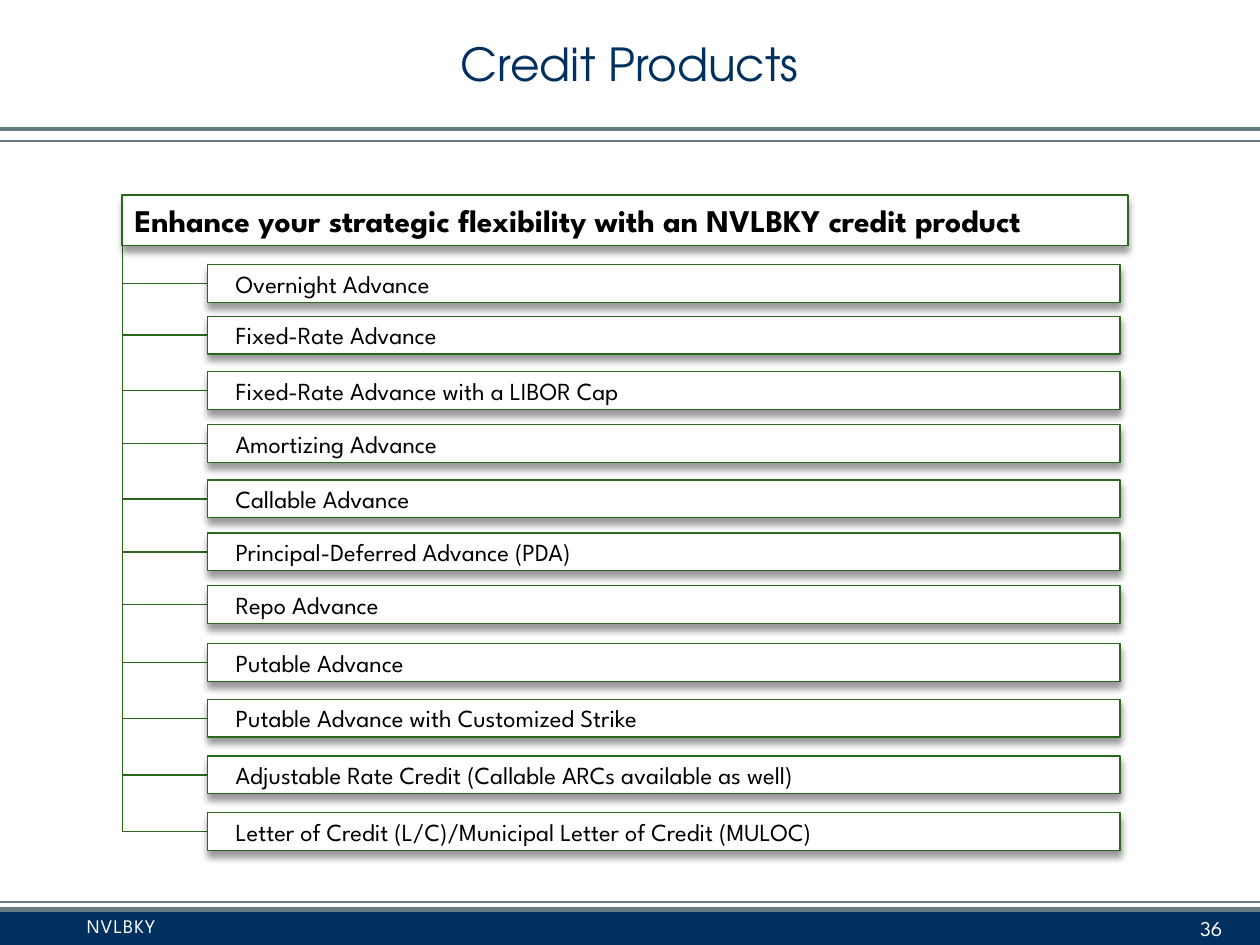
from dataclasses import dataclass

from lxml.etree import SubElement
from pptx import Presentation
from pptx.dml.color import RGBColor
from pptx.enum.shapes import MSO_CONNECTOR as Link, MSO_SHAPE as Form
from pptx.enum.text import MSO_ANCHOR as Anchor, PP_ALIGN as Align
from pptx.oxml.ns import qn
from pptx.shapes.autoshape import Shape
from pptx.slide import Slide
from pptx.util import Inches, Pt

NAVY = RGBColor(0x00, 0x30, 0x5E)
GRAY = RGBColor(0x66, 0x7C, 0x82)
GREEN = RGBColor(0x29, 0x67, 0x1C)
WHITE = RGBColor(0xFF, 0xFF, 0xFF)
BLACK = RGBColor(0x00, 0x00, 0x00)
SPARTAN = "League Spartan"
GYRE = "TeX Gyre Adventor"
BRAND = "NVLBKY"
STEM, LEFT = 0.97, 1.65
WIDE, TALL = 7.24, 0.3


@dataclass(frozen=True)
class Area:
    left: float
    top: float
    width: float
    height: float

    def sizes(self) -> list[int]:
        return [Inches(n) for n in (self.left, self.top, self.width, self.height)]


@dataclass(frozen=True)
class Style:
    size: float
    color: RGBColor
    font: str = SPARTAN
    bold: bool = False
    space: int = 0
    align: Align = Align.LEFT
    anchor: Anchor = Anchor.MIDDLE
    inset: float = 0.1
    edge: float = 0.05


@dataclass(frozen=True)
class Item:
    label: str
    top: float


TITLE = Style(26, NAVY, GYRE, align=Align.CENTER)
HEAD = Style(18, BLACK, bold=True, anchor=Anchor.TOP)
ENTRY = Style(14, BLACK, inset=0.22, edge=0)
FOOT = Style(11, WHITE, space=50, anchor=Anchor.TOP, inset=0.69)
PAGE = Style(12, WHITE, align=Align.RIGHT)

ITEMS = [
    Item("Overnight Advance", 2.1),
    Item("Fixed-Rate Advance", 2.51),
    Item("Fixed-Rate Advance with a LIBOR Cap", 2.95),
    Item("Amortizing Advance", 3.37),
    Item("Callable Advance", 3.81),
    Item("Principal-Deferred Advance (PDA)", 4.23),
    Item("Repo Advance", 4.65),
    Item("Putable Advance", 5.11),
    Item("Putable Advance with Customized Strike", 5.55),
    Item("Adjustable Rate Credit (Callable ARCs available as well)", 6),
    Item("Letter of Credit (L/C)/Municipal Letter of Credit (MULOC)", 6.45),
]


def write(shape: Shape, text: str, style: Style) -> None:
    frame = shape.text_frame
    frame.word_wrap = True
    frame.vertical_anchor = style.anchor
    frame.margin_left, frame.margin_right = Inches(style.inset), Inches(0.1)
    frame.margin_top = frame.margin_bottom = Inches(style.edge)
    line = frame.paragraphs[0]
    line.alignment = style.align
    run = line.add_run()
    run.text = text
    run.font.name = style.font
    run.font.size = Pt(style.size)
    run.font.bold = style.bold
    run.font.color.rgb = style.color
    if style.space:
        run.font._element.set("spc", str(style.space))


def label(slide: Slide, area: Area, text: str, style: Style) -> None:
    write(slide.shapes.add_textbox(*area.sizes()), text, style)


def band(slide: Slide, area: Area, color: RGBColor) -> Shape:
    shape = slide.shapes.add_shape(Form.RECTANGLE, *area.sizes())
    shape.shadow.inherit = False
    shape.fill.solid()
    shape.fill.fore_color.rgb = color
    shape.line.fill.background()
    return shape


def rule(slide: Slide, start: tuple[float, float], end: tuple[float, float],
         color: RGBColor, width: float = 0.75) -> None:
    points = [Inches(n) for n in (*start, *end)]
    line = slide.shapes.add_connector(Link.STRAIGHT, *points)
    line.line.color.rgb = color
    line.line.width = Pt(width)
    SubElement(line._element.spPr, qn("a:effectLst"))


def shade(shape: Shape) -> None:
    effects = shape._element.spPr.find(qn("a:effectLst"))
    outer = SubElement(effects, qn("a:outerShdw"), blurRad=str(Pt(4)),
                       dist=str(Pt(3)), dir="5400000", rotWithShape="0")
    tint = SubElement(outer, qn("a:srgbClr"), val=str(BLACK))
    SubElement(tint, qn("a:alpha"), val="40000")


def card(slide: Slide, area: Area, text: str, style: Style, width: float) -> None:
    shape = band(slide, area, WHITE)
    shape.line.color.rgb = GREEN
    shape.line.width = Pt(width)
    shade(shape)
    write(shape, text, style)


def frame(slide: Slide) -> None:
    band(slide, Area(0, 7.2, 10, 0.04), GRAY)
    rule(slide, (0, 7.16), (10, 7.16), GRAY, 1)
    band(slide, Area(0, 7.24, 10, 0.27), NAVY)
    rule(slide, (0, 1.12), (10, 1.12), GRAY)
    band(slide, Area(0, 1.01, 10, 0.03), GRAY)
    label(slide, Area(0, 7.21, 7.33, 0.29), BRAND, FOOT)
    label(slide, Area(0, 0, 10, 1), "Credit Products", TITLE)
    label(slide, Area(7.47, 7.24, 2.33, 0.26), "36", PAGE)


def tree(slide: Slide) -> None:
    rule(slide, (STEM, 1.74), (STEM, ITEMS[-1].top + TALL / 2), GREEN)
    for item in ITEMS:
        mid = item.top + TALL / 2
        rule(slide, (STEM, mid), (LEFT, mid), GREEN)
        card(slide, Area(LEFT, item.top, WIDE, TALL), item.label, ENTRY, 0.75)
    card(slide, Area(STEM, 1.55, 7.98, 0.4),
         f"Enhance your strategic flexibility with an {BRAND} credit product", HEAD, 1)


def main() -> None:
    """Build the credit products slide."""
    deck = Presentation()
    deck.slide_width, deck.slide_height = Inches(10), Inches(7.5)
    slide = deck.slides.add_slide(deck.slide_layouts[6])
    frame(slide)
    tree(slide)
    deck.save("out.pptx")


if __name__ == "__main__":
    main()
